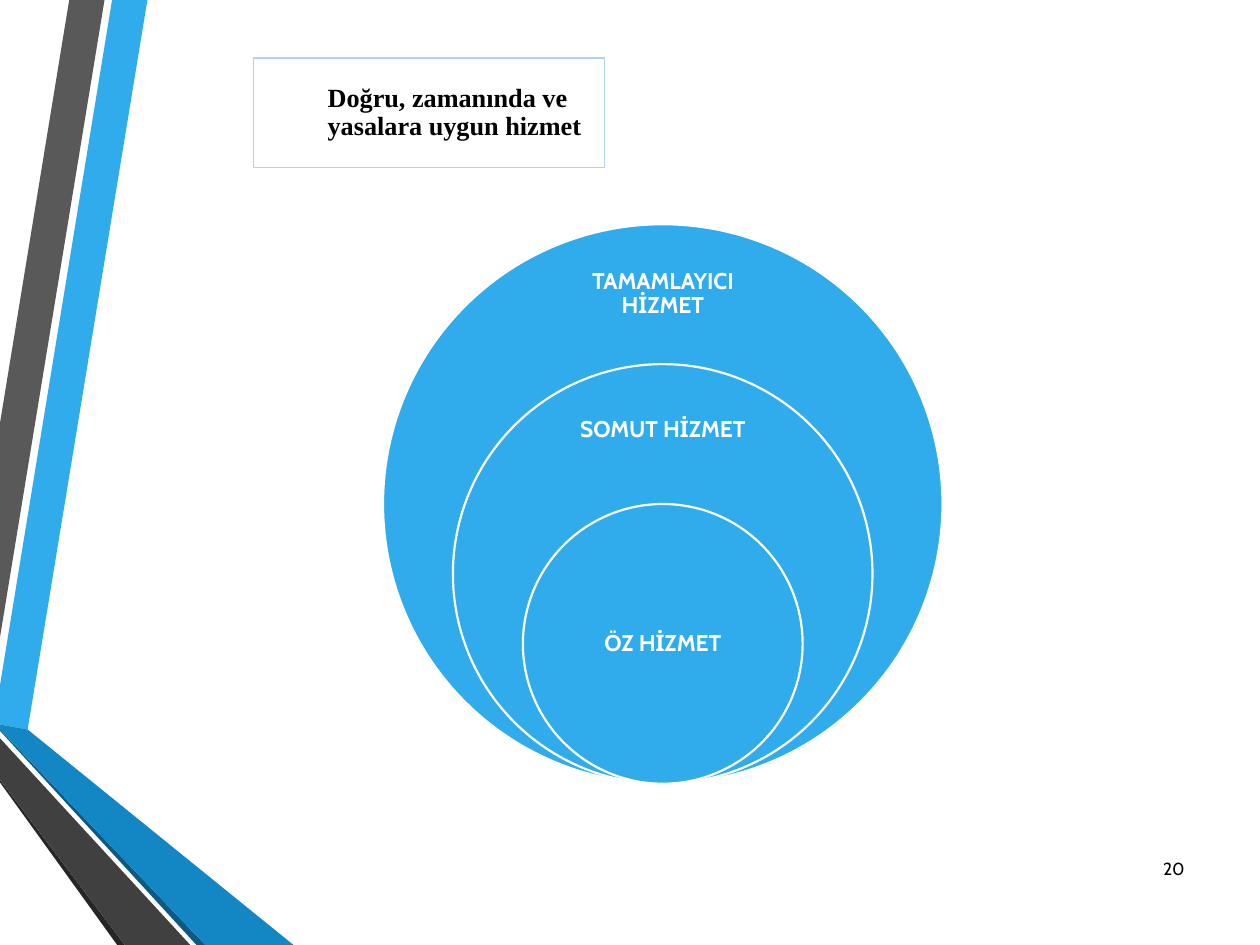
"""Build a slide of nested service layers beside a ribbon border."""
import pptx
import pptx.util
import pptx.dml.color
import pptx.enum.shapes
import pptx.enum.text
import pptx.oxml
import pptx.oxml.ns

Inches = pptx.util.Inches
Pt = pptx.util.Pt
RGB = pptx.dml.color.RGBColor.from_string
SHAPES = pptx.enum.shapes.MSO_SHAPE
ALIGN = pptx.enum.text.PP_ALIGN

THEME = {
    "blue": "30ACEC", "deep_blue": "1287C3", "navy": "0C5A82",
    "gray": "595959", "charcoal": "404040", "black": "262626",
    "white": "FFFFFF", "border": "AED2F4", "ink": "000000",
    "sans": "Cabin", "serif": "Times New Roman",
    "title_size": 15, "label_size": 13, "number_size": 10,
}


def paint(shape, fill, line=None, width=0):
    shape.shadow.inherit = False
    shape.fill.solid()
    shape.fill.fore_color.rgb = RGB(THEME[fill])
    if line:
        shape.line.color.rgb = RGB(THEME[line])
        shape.line.width = Pt(width)
    else:
        shape.line.fill.background()


def write(shape, text, font, size, color, align, insets, bold=True, spacing=0.9):
    frame = shape.text_frame
    frame.word_wrap = True
    frame.vertical_anchor = pptx.enum.text.MSO_ANCHOR.MIDDLE
    frame.margin_left, frame.margin_top, frame.margin_right, frame.margin_bottom = map(Inches, insets)
    frame.text = text
    paragraph = frame.paragraphs[0]
    paragraph.alignment = align
    paragraph.line_spacing = spacing
    letters = paragraph.runs[0].font
    letters.name = THEME[font]
    letters.size = Pt(THEME[size])
    letters.bold = bold
    letters.color.rgb = RGB(THEME[color])


deck = pptx.Presentation()
deck.slide_width, deck.slide_height = Inches(10), Inches(7.5)
slide = deck.slides.add_slide(deck.slide_layouts[6])

ribbons = [
    ("blue", [(0, 5.44), (0, 5.75), (0.22, 5.79), (1.17, 0), (0.89, 0)]),
    ("gray", [(0.83, 0), (0.55, 0), (0, 3.36), (0, 5.06)]),
    ("black", [(0, 6.19), (0, 6.21), (0.93, 7.5), (0.99, 7.5)]),
    ("navy", [(0, 5.79), (0, 5.8), (1.56, 7.5), (1.63, 7.5)]),
    ("deep_blue", [(0, 5.79), (1.63, 7.5), (2.33, 7.5), (0.22, 5.79), (0, 5.75)]),
    ("charcoal", [(0, 6.19), (0.99, 7.5), (1.51, 7.5), (0, 5.86)]),
]
for color, corners in ribbons:
    points = [(Inches(x), Inches(y)) for x, y in corners]
    outline = slide.shapes.build_freeform(*points[0])
    outline.add_line_segments(points[1:], close=True)
    paint(outline.convert_to_shape(), color)

title = slide.shapes.add_shape(SHAPES.RECTANGLE, Inches(2.01), Inches(0.46), Inches(2.79), Inches(0.87))
paint(title, "white", "border", 0.75)
title_color = title.fill._xPr.find(".//" + pptx.oxml.ns.qn("a:srgbClr"))
title_color.append(pptx.oxml.parse_xml(f'<a:alpha {pptx.oxml.ns.nsdecls("a")} val="40000"/>'))
write(title, "Doğru, zamanında ve yasalara uygun hizmet", "serif", "title_size", "ink",
      ALIGN.LEFT, (0.59, 0.06, 0.06, 0.06))

center, bottom, outer = 5.26, 6.22, 4.44
layers = [
    ("TAMAMLAYICI HİZMET", 1, 2, 0.67),
    ("SOMUT HİZMET", 0.75, 3.1, 0.62),
    ("ÖZ HİZMET", 0.5, 4.56, 1.11),
]
label_width = 1.55
for text, share, label_top, label_height in layers:
    diameter = outer * share
    circle = slide.shapes.add_shape(SHAPES.OVAL, Inches(center - diameter / 2), Inches(bottom - diameter),
                                    Inches(diameter), Inches(diameter))
    paint(circle, "blue", "white", 1.25)
    label = slide.shapes.add_textbox(Inches(center - label_width / 2), Inches(label_top),
                                     Inches(label_width), Inches(label_height))
    write(label, text, "sans", "label_size", "white", ALIGN.CENTER, (0.1, 0.1, 0.1, 0.1))

page_number = slide.shapes.add_textbox(Inches(9.05), Inches(6.69), Inches(0.45), Inches(0.4))
write(page_number, "20", "sans", "number_size", "ink", ALIGN.RIGHT, (0.1, 0.05, 0.1, 0.05),
      bold=False, spacing=1.0)

deck.save("out.pptx")
